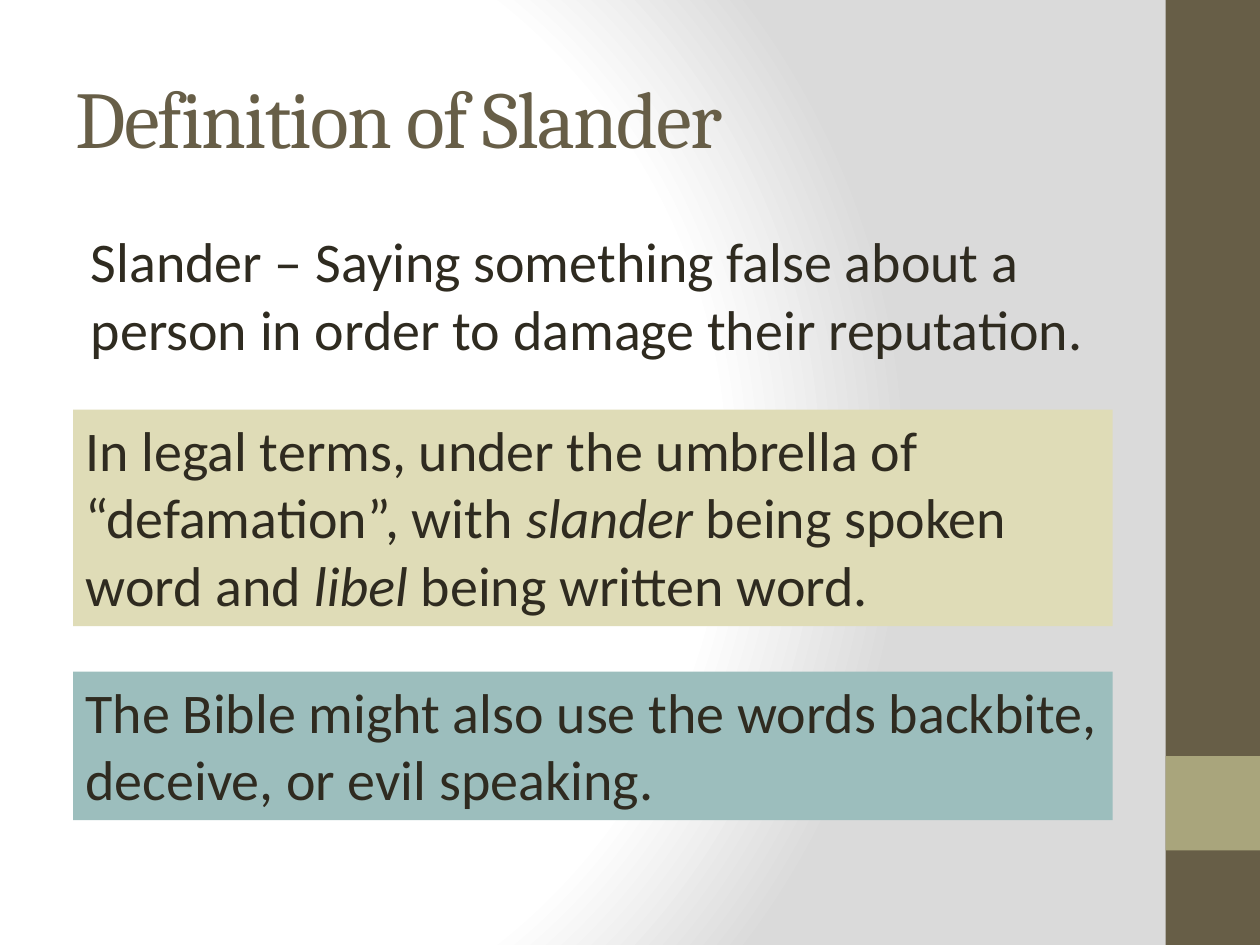
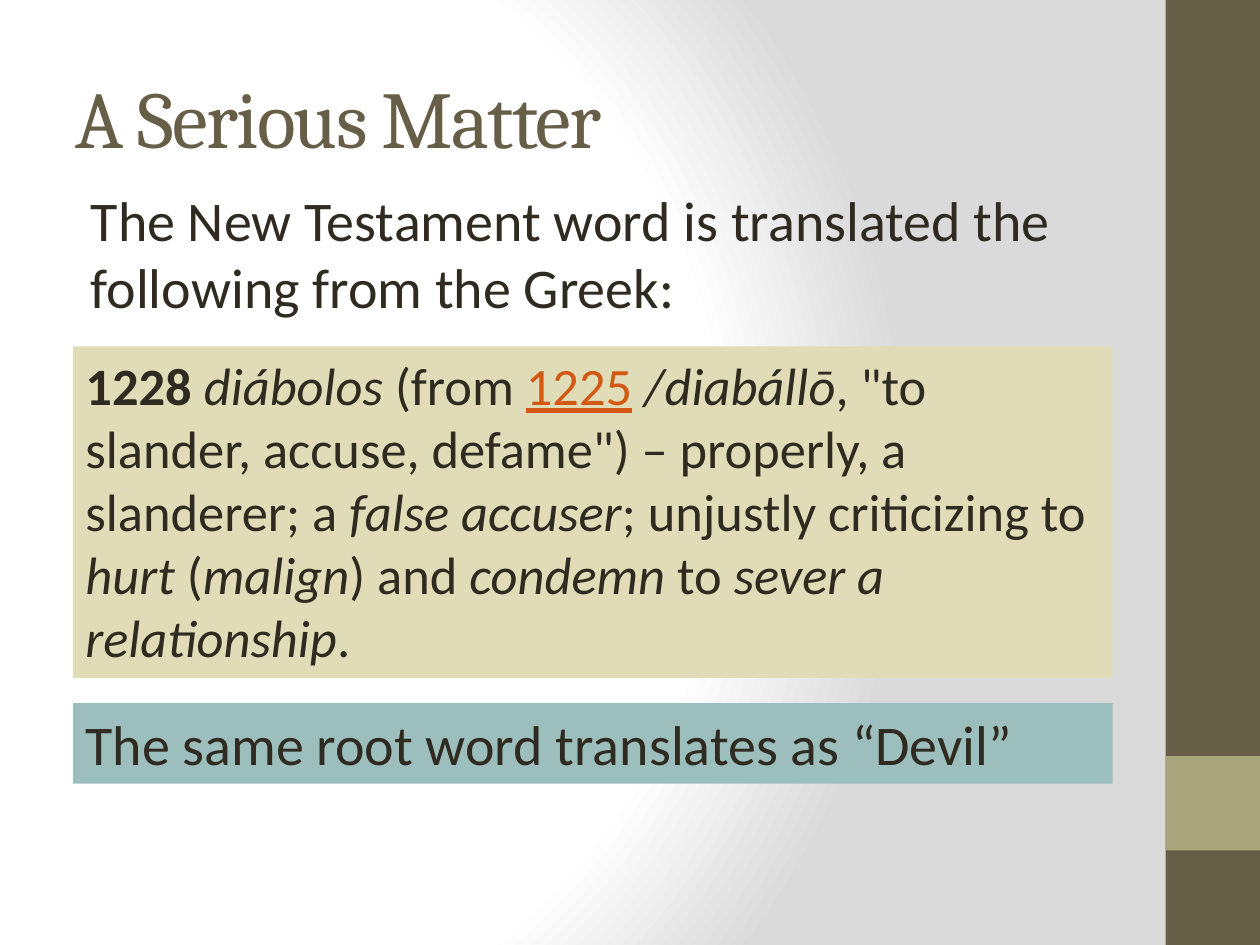
from dataclasses import dataclass

from lxml.etree import SubElement
from pptx import Presentation
from pptx.dml.color import RGBColor
from pptx.enum.shapes import MSO_SHAPE as Shape
from pptx.enum.text import MSO_ANCHOR as Anchor, MSO_AUTO_SIZE as Fit, PP_ALIGN as Align
from pptx.oxml import parse_xml
from pptx.oxml.ns import nsdecls, qn
from pptx.util import Inches, Pt


@dataclass(frozen=True)
class Theme:
    brown: str = "675E47"
    olive: str = "A9A57C"
    ink: str = "2F2B20"
    link: str = "D25814"
    sand: str = "DFDCB7"
    teal: str = "9CBEBD"
    white: str = "FFFFFF"
    gray: str = "DADADA"
    head: str = "Cambria"
    text: str = "Calibri"
    big: int = 46
    mid: int = 32
    small: int = 30


T = Theme()

PAGES = [
    {
        "title": "Definition of Slander",
        "body": (1.75, 1.33, "Slander – Saying something false about a person in order to damage their reputation."),
        "boxes": [
            (3.25, 1.72, T.sand, T.mid, [
                ("In legal terms, under the umbrella of “defamation”, with ", ""),
                ("slander", "i"),
                (" being spoken word and ", ""),
                ("libel", "i"),
                (" being written word.", ""),
            ]),
            (5.33, 1.18, T.teal, T.mid, [
                ("The Bible might also use the words backbite, deceive, or evil speaking.", ""),
            ]),
        ],
    },
    {
        "title": "A Serious Matter",
        "body": (1.42, 1.25, "The New Testament word is translated the following from the Greek:"),
        "boxes": [
            (2.75, 2.63, T.sand, T.small, [
                ("1228 ", "b"),
                ("diábolos", "i"),
                (" (from ", ""),
                ("1225", "u"),
                (" ", ""),
                ("/diabállō", "i"),
                (", \"to slander, accuse, defame\") – properly, a slanderer; a ", ""),
                ("false accuser", "i"),
                ("; unjustly criticizing to ", ""),
                ("hurt ", "i"),
                ("(", ""),
                ("malign", "i"),
                (") and ", ""),
                ("condemn", "i"),
                (" to ", ""),
                ("sever a relationship", "i"),
                (".", ""),
            ]),
            (5.58, 0.64, T.teal, T.mid, [("The same root word translates as “Devil”", "")]),
        ],
    },
]

BANDS = [(0, 7.5, T.brown), (6, 0.75, T.olive)]
STOPS = [(0, T.white), (75, T.white), (100, T.gray)]


def place(shape, left, top, width, height):
    shape.left, shape.top = Inches(left), Inches(top)
    shape.width, shape.height = Inches(width), Inches(height)


def paint(master):
    stops = "".join(
        f'<a:gs pos="{pos * 1000}"><a:srgbClr val="{hue}"/></a:gs>' for pos, hue in STOPS
    )
    page = master.element.cSld
    for old in page.findall(qn("p:bg")):
        page.remove(old)
    page.insert(0, parse_xml(
        f'<p:bg {nsdecls("p", "a")}><p:bgPr><a:gradFill rotWithShape="1">'
        f'<a:gsLst>{stops}</a:gsLst><a:path path="circle">'
        '<a:fillToRect l="20000" t="50000" r="100000" b="50000"/></a:path>'
        '</a:gradFill><a:effectLst/></p:bgPr></p:bg>'
    ))


def add_rect(slide, left, top, width, height, hue):
    rect = slide.shapes.add_shape(
        Shape.RECTANGLE, Inches(left), Inches(top), Inches(width), Inches(height)
    )
    rect.shadow.inherit = False
    rect.fill.solid()
    rect.fill.fore_color.rgb = RGBColor.from_string(hue)
    rect.line.fill.background()
    return rect


def write(frame, runs, face, size, hue, anchor=Anchor.TOP, fit=Fit.NONE):
    frame.word_wrap = True
    frame.auto_size = fit
    frame.vertical_anchor = anchor
    para = frame.paragraphs[0]
    para.alignment = Align.LEFT
    for words, style in runs:
        run = para.add_run()
        run.text = words
        font = run.font
        font.name, font.size = face, Pt(size)
        font.bold, font.italic = style == "b", style == "i"
        font.underline = style == "u"
        font.color.rgb = RGBColor.from_string(T.link if style == "u" else hue)
    return para


def add_title(slide, words):
    title = slide.shapes.title
    place(title, 0.5, 0.3, 8.33, 1.25)
    para = write(title.text_frame, [(words, "")], T.head, T.big, T.brown, Anchor.MIDDLE)
    para.runs[0].font._element.set("spc", "-100")


def add_body(slide, top, height, words):
    body = slide.placeholders[1]
    place(body, 0.5, top, 8.33, height)
    para = write(body.text_frame, [(words, "")], T.text, T.mid, T.ink)
    props = para._p.get_or_add_pPr()
    props.set("marL", str(Inches(0.12)))
    props.set("indent", "0")
    SubElement(props, qn("a:buNone"))


def build(deck, page):
    slide = deck.slides.add_slide(deck.slide_layouts[1])
    for top, height, hue in BANDS:
        add_rect(slide, 9.25, top, 0.75, height, hue)
    add_title(slide, page["title"])
    add_body(slide, *page["body"])
    for top, height, hue, size, runs in page["boxes"]:
        box = add_rect(slide, 0.58, top, 8.25, height, hue)
        write(box.text_frame, runs, T.text, size, T.ink, fit=Fit.SHAPE_TO_FIT_TEXT)


def main():
    deck = Presentation()
    deck.slide_width, deck.slide_height = Inches(10), Inches(7.5)
    paint(deck.slide_master)
    for page in PAGES:
        build(deck, page)
    deck.save("out.pptx")


if __name__ == "__main__":
    main()
